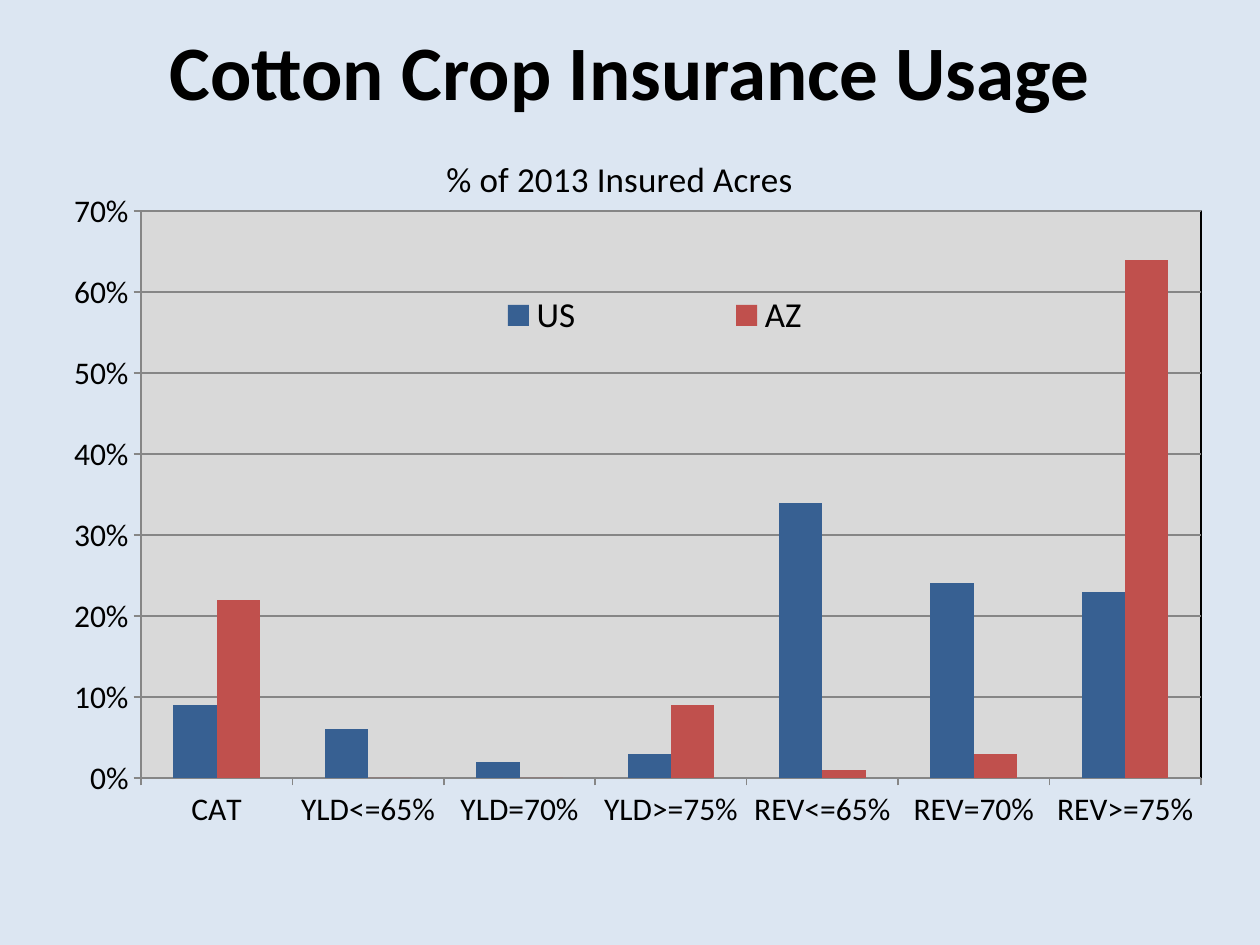
"""Build the cotton crop insurance slide with its clustered column chart."""
from pptx import Presentation
from pptx.chart.data import CategoryChartData
from pptx.dml.color import RGBColor
from pptx.enum.chart import XL_CHART_TYPE, XL_LEGEND_POSITION, XL_TICK_MARK
from pptx.enum.text import MSO_ANCHOR, PP_ALIGN
from pptx.oxml import parse_xml
from pptx.oxml.ns import nsdecls
from pptx.util import Pt

PX = 914400 // 126
TITLE = "Cotton Crop Insurance Usage"
HEADING = "% of 2013 Insured Acres"
GROUPS = ["CAT", "YLD<=65%", "YLD=70%", "YLD>=75%", "REV<=65%", "REV=70%", "REV>=75%"]
SERIES = [
    ("US", "376092", [0.09, 0.06, 0.02, 0.03, 0.34, 0.24, 0.23]),
    ("AZ", "C0504D", [0.22, 0, 0, 0.09, 0.01, 0.03, 0.64]),
]
BOXES = {"title": (21, 10, 1218, 120), "chart": (21, 130, 1197, 756)}
LAYOUTS = [
    ("plotArea", 0, {"x": 120, "y": 81, "w": 1060, "h": 567}),
    ("title", 1, {"x": 419, "y": 18}),
    ("legend", 1, {"x": 338, "y": 163, "w": 592, "h": 45}),
]
FORMATS = {
    "title": {"name": "Calibri", "size": Pt(44), "bold": True},
    "axis": {"name": "Calibri", "size": Pt(18), "bold": False},
    "label": {"name": "Calibri", "size": Pt(20), "bold": False},
}


def color(code):
    return RGBColor.from_string(code)


def style(font, kind):
    for key, value in FORMATS[kind].items():
        setattr(font, key, value)
    font.color.rgb = color("000000")


def fill(target, code):
    target.fill.solid()
    target.fill.fore_color.rgb = color(code)


def stroke(line, code="868686"):
    line.color.rgb = color(code)
    line.width = Pt(1)


def place(chart, tag, index, spots):
    node = chart.element.xpath(f"c:chart//c:{tag}")[0]
    for old in node.xpath("c:layout"):
        node.remove(old)
    wide, high = BOXES["chart"][2:]
    spans = {"x": wide, "y": high, "w": wide, "h": high}
    inner = '<c:layoutTarget val="inner"/>' if tag == "plotArea" else ""
    modes = "".join(f'<c:{key}Mode val="edge"/>' for key in "xy")
    sizes = "".join(f'<c:{key} val="{value / spans[key]}"/>' for key, value in spots.items())
    node.insert(index, parse_xml(
        f'<c:layout {nsdecls("c")}><c:manualLayout>{inner}{modes}{sizes}'
        "</c:manualLayout></c:layout>"))


def shade(chart):
    area = chart.element.xpath("c:chart/c:plotArea")[0]
    area.append(parse_xml(
        f'<c:spPr {nsdecls("c", "a")}><a:solidFill><a:srgbClr val="D9D9D9"/></a:solidFill>'
        '<a:ln w="9525"><a:solidFill><a:srgbClr val="000000"/></a:solidFill></a:ln></c:spPr>'))


def add_title(slide):
    title = slide.shapes.title
    title.left, title.top, title.width, title.height = (n * PX for n in BOXES["title"])
    frame = title.text_frame
    frame.text = TITLE
    frame.vertical_anchor = MSO_ANCHOR.MIDDLE
    frame.paragraphs[0].alignment = PP_ALIGN.CENTER
    style(frame.paragraphs[0].runs[0].font, "title")


def add_columns(slide):
    data = CategoryChartData(number_format="0%")
    data.categories = GROUPS
    for name, _, values in SERIES:
        data.add_series(name, values)
    box = [n * PX for n in BOXES["chart"]]
    chart = slide.shapes.add_chart(XL_CHART_TYPE.COLUMN_CLUSTERED, *box, data).chart
    style(chart.font, "axis")

    chart.has_title = True
    chart.chart_title.include_in_layout = True
    frame = chart.chart_title.text_frame
    frame.text = HEADING
    style(frame.paragraphs[0].runs[0].font, "label")

    chart.has_legend = True
    chart.legend.position = XL_LEGEND_POSITION.RIGHT
    chart.legend.include_in_layout = True
    style(chart.legend.font, "label")

    plot = chart.plots[0]
    plot.gap_width, plot.overlap, plot.vary_by_categories = 150, 0, False
    for series, (_, code, _) in zip(plot.series, SERIES):
        fill(series.format, code)

    for axis in (chart.category_axis, chart.value_axis):
        axis.major_tick_mark = XL_TICK_MARK.OUTSIDE
        axis.minor_tick_mark = XL_TICK_MARK.NONE
        style(axis.tick_labels.font, "axis")
        stroke(axis.format.line)
    scale = chart.value_axis
    scale.minimum_scale, scale.maximum_scale, scale.major_unit = 0, 0.7, 0.1
    scale.tick_labels.number_format = "0%"
    scale.tick_labels.number_format_is_linked = False
    scale.has_major_gridlines = True
    stroke(scale.major_gridlines.format.line)

    shade(chart)
    for tag, index, spots in LAYOUTS:
        place(chart, tag, index, spots)


def main():
    deck = Presentation()
    deck.slide_width, deck.slide_height = 1260 * PX, 945 * PX
    slide = deck.slides.add_slide(deck.slide_layouts[5])
    fill(slide.background, "DCE6F2")
    add_title(slide)
    add_columns(slide)
    deck.save("out.pptx")


if __name__ == "__main__":
    main()
